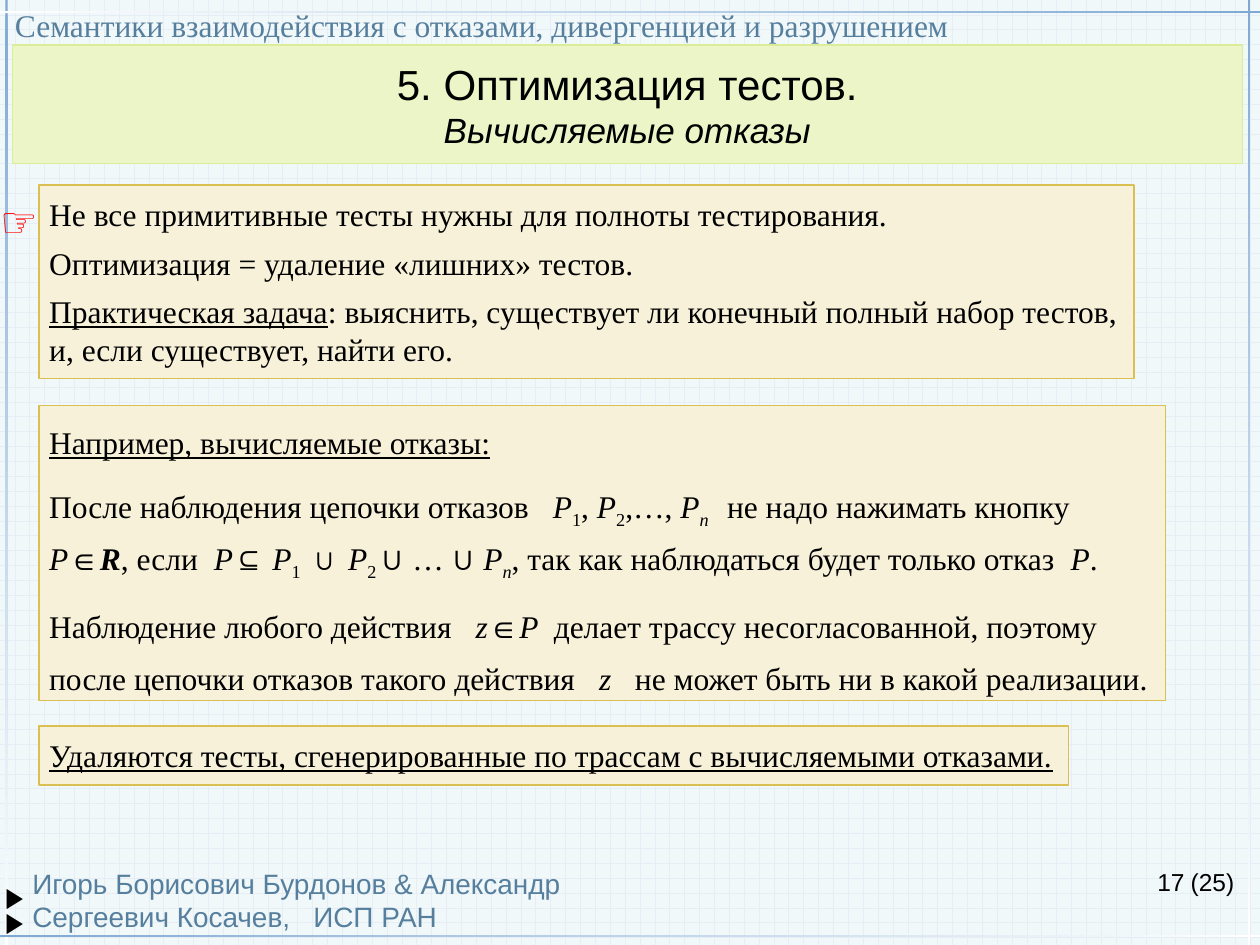
"""Build the slide on test optimisation by computable refusals."""
from pptx import Presentation
from pptx.dml.color import RGBColor
from pptx.enum.dml import MSO_PATTERN
from pptx.enum.shapes import MSO_SHAPE
from pptx.enum.text import MSO_ANCHOR, PP_ALIGN
from pptx.util import Pt

BRICK = MSO_PATTERN.HORIZONTAL_BRICK
RECTANGLE = MSO_SHAPE.RECTANGLE
TOP, MIDDLE, BOTTOM = MSO_ANCHOR.TOP, MSO_ANCHOR.MIDDLE, MSO_ANCHOR.BOTTOM
LEFT, CENTER, RIGHT = PP_ALIGN.LEFT, PP_ALIGN.CENTER, PP_ALIGN.RIGHT

BLACK = RGBColor(0x00, 0x00, 0x00)
WHITE = RGBColor(0xFF, 0xFF, 0xFF)
RED = RGBColor(0xFF, 0x00, 0x00)
STEEL = RGBColor(0x56, 0x7F, 0x9E)
RULE_BLUE = RGBColor(0x7F, 0xA9, 0xD3)
BRICK_LINE = RGBColor(0xE7, 0xED, 0xF5)
BRICK_FILL = RGBColor(0xF1, 0xF8, 0xF9)
LIME = RGBColor(0xEB, 0xF5, 0xC7)
LIME_LINE = RGBColor(0xDB, 0xED, 0x97)
CREAM = RGBColor(0xF7, 0xF1, 0xD9)
GOLD = RGBColor(0xDA, 0xC0, 0x52)
SERIF, SANS = "Times New Roman", "Arial"


def write(shape, paragraphs, font=SERIF, size=18, color=BLACK, align=LEFT, anchor=TOP,
          inset=(0, 0), wrap=False, gaps=(0,), spacing=1.0):
    """Fill a shape; run flags are b, i, u, s (subscript), a (Arial), l (large)."""
    frame = shape.text_frame
    frame.word_wrap = wrap
    frame.vertical_anchor = anchor
    frame.margin_left = frame.margin_right = Pt(inset[0])
    frame.margin_top = frame.margin_bottom = Pt(inset[1])
    for number, (runs, gap) in enumerate(zip(paragraphs, gaps)):
        paragraph = frame.add_paragraph() if number else frame.paragraphs[0]
        paragraph.alignment = align
        paragraph.line_spacing = spacing
        paragraph.space_before = Pt(gap)
        for text, flags in runs:
            for part, line in enumerate(text.split("\n")):
                if part:
                    paragraph.add_line_break()
                run = paragraph.add_run()
                run.text = line
                run.font.name = SANS if "a" in flags else font
                run.font.size = Pt(24 if "l" in flags else size)
                run.font.color.rgb = color
                run.font.bold = "b" in flags
                run.font.italic = "i" in flags
                run.font.underline = "u" in flags
                if "s" in flags:
                    run.font._element.set("baseline", "-25000")


presentation = Presentation()
presentation.slide_width, presentation.slide_height = Pt(720), Pt(540)
slide = presentation.slides.add_slide(presentation.slide_layouts[5])
backdrop = slide.background.fill
backdrop.patterned()
backdrop.pattern = BRICK
backdrop.fore_color.rgb = BRICK_LINE
backdrop.back_color.rgb = BRICK_FILL

for left, top, width, height, angle in [
    (3, 0, 1.4, 540, 270),
    (0, 6.2, 720, 1.4, 180),
    (0, 534.2, 720, 1.4, 0),
    (713, 0, 1.4, 540, 270),
]:
    border = slide.shapes.add_shape(RECTANGLE, Pt(left), Pt(top), Pt(width), Pt(height))
    border.shadow.inherit = False
    border.line.fill.background()
    border.fill.gradient()
    border.fill.gradient_angle = angle
    for stop, stop_color in zip(border.fill.gradient_stops, (RULE_BLUE, WHITE)):
        stop.color.rgb = stop_color

title = slide.shapes.title
title.left, title.top, title.width, title.height = Pt(7), Pt(25.7), Pt(703), Pt(67.7)
title.fill.solid()
title.fill.fore_color.rgb = LIME
title.line.color.rgb = LIME_LINE
title.line.width = Pt(0.75)
write(title, [[("5. Оптимизация тестов.\n", "l"), ("Вычисляемые отказы", "i")]],
      font=SANS, size=20, align=CENTER, anchor=MIDDLE, inset=(0, 7.2), wrap=True)

for text, left, top, width, height, look in [
    ("17", 516, 492, 168, 37, dict(font=SANS, size=14, align=RIGHT, inset=(7.2, 3.6), wrap=True)),
    ("(25)", 680.4, 495.4, 25, 17, dict(font=SANS, size=14)),
    ("Игорь Борисович Бурдонов & Александр Сергеевич Косачев,   ИСП РАН",
     18.5, 514, 302, 19.5, dict(font=SANS, size=16, color=STEEL, anchor=BOTTOM)),
    ("Семантики взаимодействия с отказами, дивергенцией и разрушением",
     8.6, 3.6, 700, 21.6, dict(color=STEEL, wrap=True)),
    ("☞", 0, 111.6, 22.3, 29, dict(font=SANS, size=24, color=RED)),
    ("▶", 2.9, 502.6, 8.6, 19.5, dict(size=16)),
    ("▶", 2.9, 517, 8.6, 19.5, dict(size=16)),
]:
    label = slide.shapes.add_textbox(Pt(left), Pt(top), Pt(width), Pt(height))
    write(label, [[(text, "b" if text in "☞▶" else "")]], **look)

goal = [
    [("Не все примитивные тесты нужны для полноты тестирования.", "")],
    [("Оптимизация = удаление «лишних» тестов.", "")],
    [("Практическая задача", "u"),
     (": выяснить, существует ли конечный полный набор тестов,\nи, если существует, найти его.", "")],
]
example = [
    [("Например, вычисляемые отказы:", "u")],
    [("После наблюдения цепочки отказов   ", ""), ("P", "i"), ("1", "s"), (", ", ""),
     ("P", "i"), ("2", "s"), (",…, ", ""), ("P", "i"), ("n    ", "is"),
     ("не надо нажимать кнопку", "")],
    [("P", "i"), ("∈", ""), ("R", "bi"), (", если  ", ""), ("P", "i"), ("⊆ ", ""),
     ("P", "i"), ("1", "s"), (" ∪ ", ""), ("P", "i"), ("2 ", "s"), ("∪ ", "a"), ("… ", ""),
     ("∪ ", "a"), ("P", "i"), ("n", "is"),
     (", так как наблюдаться будет только отказ  ", ""), ("P", "i"), (".", "")],
    [("Наблюдение любого действия   ", ""), ("z", "i"), ("∈", ""), ("P ", "i"),
     (" делает трассу несогласованной, поэтому", "")],
    [("после цепочки отказов такого действия   ", ""), ("z", "i"),
     ("   не может быть ни в какой реализации.", "")],
]
conclusion = [[("Удаляются тесты, сгенерированные по трассам с вычисляемыми отказами.", "u")]]

for paragraphs, top, width, height, gaps, spacing in [
    (goal, 105.8, 625.7, 110.6, (0, 6, 6), 1.0),
    (example, 231.8, 643.7, 168.5, (0, 10, 0, 10, 4), 1.2),
    (conclusion, 414.7, 588.3, 33.8, (0,), 1.0),
]:
    panel = slide.shapes.add_shape(RECTANGLE, Pt(22.3), Pt(top), Pt(width), Pt(height))
    panel.shadow.inherit = False
    panel.fill.solid()
    panel.fill.fore_color.rgb = CREAM
    panel.line.color.rgb = GOLD
    panel.line.width = Pt(1)
    write(panel, paragraphs, inset=(5.8, 5.8), gaps=gaps, spacing=spacing)

presentation.save("out.pptx")
